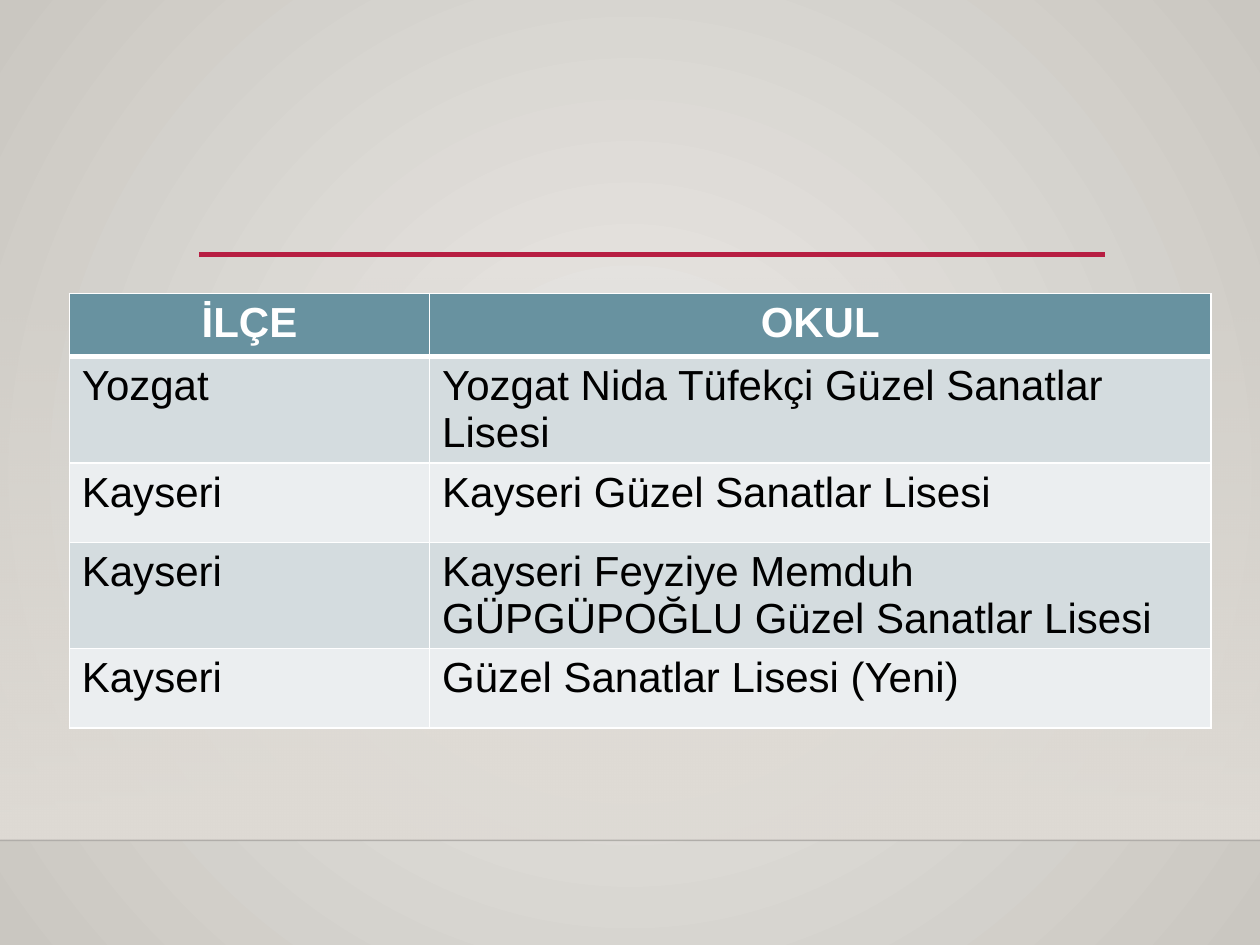
from dataclasses import dataclass

from lxml.etree import SubElement
from pptx import Presentation
from pptx.dml.color import RGBColor
from pptx.enum.shapes import MSO_CONNECTOR, MSO_SHAPE
from pptx.enum.text import PP_ALIGN
from pptx.oxml.ns import qn
from pptx.util import Inches, Pt


@dataclass(frozen=True)
class Theme:
    font: str = "Arial"
    text_size: int = 24
    center: str = "ECEAE7"
    edge: str = "CAC7C1"
    floor: str = "DFDBD5"
    horizon: str = "000001"
    accent: str = "B71E42"
    header: str = "6892A0"
    bands: tuple = ("D4DCDF", "EBEEF0")
    white: str = "FFFFFF"
    black: str = "000000"


def write_text(frame, text, font, size, color, bold=False, align=PP_ALIGN.LEFT):
    paragraph = frame.paragraphs[0]
    paragraph.alignment = align
    run = paragraph.add_run()
    run.text = text
    run.font.name = font
    run.font.size = Pt(size)
    run.font.bold = bold
    run.font.color.rgb = RGBColor.from_string(color)


def set_alpha(element, percent):
    color = next(element.iter(qn("a:srgbClr")))
    SubElement(color, qn("a:alpha"), val=str(percent * 1000))


class SlideBuilder:
    def __init__(self, presentation, theme):
        self.theme = theme
        self.width = presentation.slide_width
        self.height = presentation.slide_height
        self.slide = presentation.slides.add_slide(presentation.slide_layouts[6])

    def across(self, share):
        return round(self.width * share)

    def down(self, share):
        return round(self.height * share)

    def gradient(self, fill, colors):
        fill.gradient()
        for stop, color in zip(fill.gradient_stops, colors):
            stop.color.rgb = RGBColor.from_string(color)

    def background(self):
        self.gradient(self.slide.background.fill, (self.theme.center, self.theme.edge))
        linear = next(self.slide.element.iter(qn("a:lin")))
        gradient = linear.getparent()
        gradient.remove(linear)
        circle = SubElement(gradient, qn("a:path"), path="circle")
        SubElement(circle, qn("a:fillToRect"), l="50000", t="50000", r="50000", b="50000")

    def fading_band(self, top, height, color):
        shape = self.slide.shapes.add_shape(
            MSO_SHAPE.RECTANGLE, 0, self.down(top), self.width, self.down(height))
        shape.shadow.inherit = False
        shape.line.fill.background()
        self.gradient(shape.fill, (color, color))
        shape.fill.gradient_angle = 270
        set_alpha(shape.element.spPr, 0)

    def rule(self, left, right, top, color, weight, alpha=None):
        line = self.slide.shapes.add_connector(
            MSO_CONNECTOR.STRAIGHT, self.across(left), self.down(top),
            self.across(right), self.down(top))
        line.line.width = Pt(weight)
        line.line.color.rgb = RGBColor.from_string(color)
        if alpha is not None:
            set_alpha(line.element.spPr, alpha)
        SubElement(line.element.spPr, qn("a:effectLst"))

    def border(self, cell, side, weight):
        properties = cell._tc.get_or_add_tcPr()
        line = SubElement(properties, qn(f"a:ln{side}"), w=str(Pt(weight)))
        fill = SubElement(line, qn("a:solidFill"))
        SubElement(fill, qn("a:srgbClr"), val=self.theme.white)

    def table(self, left, top, columns, heights, rows):
        theme = self.theme
        frame = self.slide.shapes.add_table(
            len(rows), len(columns), self.across(left), self.down(top),
            self.across(sum(columns)), self.down(sum(heights)))
        table = frame.table
        for column, share in zip(table.columns, columns):
            column.width = self.across(share)
        for index, (row, share, texts) in enumerate(zip(table.rows, heights, rows)):
            row.height = self.down(share)
            is_header = index == 0
            color = theme.header if is_header else theme.bands[(index - 1) % 2]
            for cell, text in zip(row.cells, texts):
                for side in "LRTB" if is_header else "LRB":
                    self.border(cell, side, 3 if is_header and side == "B" else 1)
                cell.fill.solid()
                cell.fill.fore_color.rgb = RGBColor.from_string(color)
                write_text(cell.text_frame, text, theme.font, theme.text_size,
                           theme.white if is_header else theme.black, bold=is_header,
                           align=PP_ALIGN.CENTER if is_header else PP_ALIGN.LEFT)


def main():
    presentation = Presentation()
    presentation.slide_width = Inches(10)
    presentation.slide_height = Inches(7.5)
    theme = Theme()
    builder = SlideBuilder(presentation, theme)
    schools = [
        ("İLÇE", "OKUL"),
        ("Yozgat", "Yozgat Nida Tüfekçi Güzel Sanatlar Lisesi"),
        ("Kayseri", "Kayseri Güzel Sanatlar Lisesi"),
        ("Kayseri", "Kayseri Feyziye Memduh GÜPGÜPOĞLU Güzel Sanatlar Lisesi"),
        ("Kayseri", "Güzel Sanatlar Lisesi (Yeni)"),
    ]
    horizon = 6.67 / 7.5
    band_top = 2.2 / 7.5
    builder.background()
    builder.fading_band(band_top, horizon - band_top, theme.floor)
    builder.rule(0, 1, horizon, theme.horizon, 1, alpha=20)
    builder.rule(0.158, 0.877, 2.02 / 7.5, theme.accent, 2.5)
    row_heights = [inches / 7.5 for inches in (0.5, 0.67, 0.63, 0.63, 0.63)]
    builder.table(0.055, 2.33 / 7.5, (0.286, 0.62), row_heights, schools)
    presentation.save("out.pptx")


if __name__ == "__main__":
    main()
